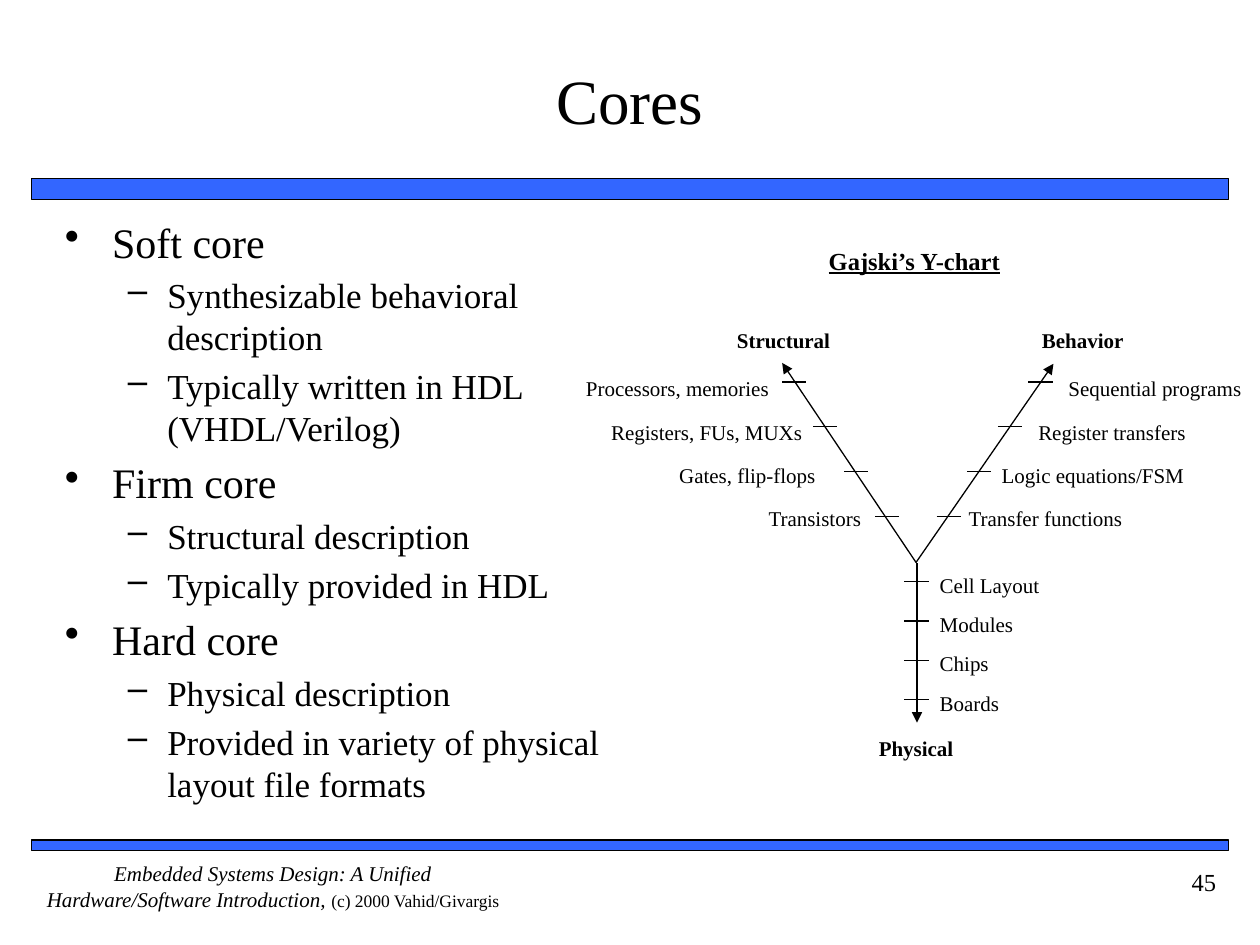
import pptx
import pptx.dml.color
import pptx.enum.shapes
import pptx.enum.text
import pptx.oxml
import pptx.util
from dataclasses import dataclass
from pptx.oxml.ns import qn

Pt = pptx.util.Pt
ALIGN = pptx.enum.text.PP_ALIGN
RGB = pptx.dml.color.RGBColor


@dataclass(frozen=True)
class Theme:
    font: str = "Times New Roman"
    ink: RGB = RGB(0, 0, 0)
    bar: RGB = RGB(0x33, 0x66, 0xFF)
    title: int = 36
    topic: int = 24
    detail: int = 20
    heading: int = 14
    label: int = 12
    credit: int = 10
    bar_line: float = 1
    chart_line: float = 0.75


THEME = Theme()

CORES = [
    ("Soft core", ["Synthesizable behavioral description",
                   "Typically written in HDL (VHDL/Verilog)"]),
    ("Firm core", ["Structural description", "Typically provided in HDL"]),
    ("Hard core", ["Physical description",
                   "Provided in variety of physical layout file formats"]),
]

# Each label: text, left edge within the chart, width
STRUCTURAL = [("Processors, memories", 4.8, 110), ("Registers, FUs, MUXs", 19.2, 112),
              ("Gates, flip-flops", 58.1, 87), ("Transistors", 109.2, 56)]
BEHAVIOR = [("Sequential programs", 280.5, 101), ("Register transfers", 263.3, 90),
            ("Logic equations/FSM", 242.4, 107), ("Transfer functions", 223.5, 92)]
PHYSICAL = [("Cell Layout", 207, 70), ("Modules", 207, 46),
            ("Chips", 207, 37), ("Boards", 207, 40)]


def add_run(paragraph, text, size, **formats):
    run = paragraph.add_run()
    run.text = text
    values = {"name": THEME.font, "size": Pt(size), **formats}
    for name, value in values.items():
        setattr(run.font, name, value)
    run.font.color.rgb = THEME.ink


def add_frame(slide, box, inset_x=0, inset_y=0):
    """Add a wrapping text box and return its text frame."""
    frame = slide.shapes.add_textbox(*map(Pt, box)).text_frame
    values = {"word_wrap": True, "margin_left": Pt(inset_x), "margin_right": Pt(inset_x),
              "margin_top": Pt(inset_y), "margin_bottom": Pt(inset_y)}
    for name, value in values.items():
        setattr(frame, name, value)
    return frame


def add_text(slide, box, text, size, align=ALIGN.LEFT, **formats):
    frame = add_frame(slide, box)
    frame.paragraphs[0].alignment = align
    add_run(frame.paragraphs[0], text, size, **formats)
    return frame


def add_bar(slide, box):
    bar = slide.shapes.add_shape(pptx.enum.shapes.MSO_SHAPE.RECTANGLE, *map(Pt, box))
    bar.shadow.inherit = False
    bar.fill.solid()
    bar.fill.fore_color.rgb = THEME.bar
    bar.line.color.rgb = THEME.ink
    bar.line.width = Pt(THEME.bar_line)


def style_line(shape, *arrow_ends):
    """Draw a thin line; arrow_ends may hold headEnd and tailEnd, in that order."""
    shape.line.color.rgb = THEME.ink
    shape.line.width = Pt(THEME.chart_line)
    line = shape.line._get_or_add_ln()
    for end in arrow_ends:
        line.append(line.makeelement(qn(f"a:{end}"), {"type": "triangle"}))
    properties = shape._element.spPr
    if properties.find(qn("a:effectLst")) is None:
        properties.append(properties.makeelement(qn("a:effectLst"), {}))


def add_line(slide, x1, y1, x2, y2, *arrow_ends):
    line = slide.shapes.add_connector(
        pptx.enum.shapes.MSO_CONNECTOR.STRAIGHT, Pt(x1), Pt(y1), Pt(x2), Pt(y2))
    style_line(line, *arrow_ends)


def add_title(slide, box, text):
    frame = add_text(slide, box, text, THEME.title, ALIGN.CENTER)
    frame.vertical_anchor = pptx.enum.text.MSO_ANCHOR.MIDDLE


def add_bullet(paragraph, text, size, symbol, level, indent, hanging):
    paragraph.level = level
    properties = paragraph._p.get_or_add_pPr()
    properties.set("marL", str(Pt(indent)))
    properties.set("indent", str(-Pt(hanging)))
    properties.append(properties.makeelement(qn("a:buChar"), {"char": symbol}))
    add_run(paragraph, text, size)


def add_core_list(slide, box):
    frame = add_frame(slide, box, 7.2, 3.6)
    items = []
    for topic, details in CORES:
        items.append((topic, THEME.topic, "•", 0, 27, 27))
        items += [(detail, THEME.detail, "–", 1, 58.5, 22.5) for detail in details]
    for index, item in enumerate(items):
        paragraph = frame.add_paragraph() if index else frame.paragraphs[0]
        paragraph.space_before = Pt(0.2 * item[1] if index else 0)
        add_bullet(paragraph, *item)


def add_axis(slide, origin, labels, first_tick, tick_step, first_label, label_step):
    """Place evenly stepped ticks along one axis, each with its label."""
    left, top = origin
    tick_width = 13.8
    for index, (text, label_left, width) in enumerate(labels):
        x = left + first_tick[0] + index * tick_step[0]
        y = top + first_tick[1] + index * tick_step[1]
        add_line(slide, x, y, x + tick_width, y)
        label_top = top + first_label + index * label_step
        add_text(slide, (left + label_left, label_top, width, 15), text, THEME.label)


def add_y_chart(slide, box):
    left, top, _, _ = box
    add_text(slide, (left + 118, top, 149, 16.5), "Gajski’s Y-chart", THEME.heading,
             ALIGN.CENTER, bold=True, underline=True)
    for text, x, y, width in [("Structural", 81, 47, 73.5), ("Behavior", 244.5, 47, 88.5),
                              ("Physical", 167, 280, 53)]:
        add_text(slide, (left + x, top + y, width, 15), text, THEME.label,
                 ALIGN.CENTER, bold=True)

    points = [(Pt(left + x), Pt(top + y)) for x, y in [(117, 67), (193.5, 181), (272, 67.5)]]
    builder = slide.shapes.build_freeform(*points[0])
    builder.add_line_segments(points[1:], close=False)
    arms = builder.convert_to_shape()
    arms.shadow.inherit = False
    arms.fill.background()
    style_line(arms, "headEnd", "tailEnd")
    add_line(slide, left + 194, top + 181.5, left + 194, top + 272.5, "tailEnd")

    origin = (left, top)
    add_axis(slide, origin, STRUCTURAL, (117, 77.9), (17.7, 25.6), 74.3, 24.8)
    add_axis(slide, origin, BEHAVIOR, (257.7, 77.9), (-17.5, 25.6), 74.3, 24.8)
    add_axis(slide, origin, PHYSICAL, (186.8, 192), (0, 22.5), 186.6, 22.5)


def add_footer(slide, box):
    left, top, width, height = box
    add_bar(slide, (left, top, width, 6))
    text_top = top + 12
    frame = add_text(slide, (left, text_top, 276, 36),
                     "Embedded Systems Design: A Unified Hardware/Software Introduction, ",
                     THEME.label, ALIGN.CENTER, italic=True)
    add_run(frame.paragraphs[0], "(c) 2000 Vahid/Givargis", THEME.credit)
    number = add_frame(slide, (left + width - 72, text_top, 72, height - 12), 7.2, 3.6)
    number.paragraphs[0].alignment = ALIGN.RIGHT
    add_run(number.paragraphs[0], "45", THEME.heading)


def main():
    presentation = pptx.Presentation()
    presentation.slide_width, presentation.slide_height = Pt(720), Pt(540)
    slide = presentation.slides.add_slide(presentation.slide_layouts[6])
    add_bar(slide, (18, 102, 684, 12))
    add_title(slide, (30, 12, 660, 90), "Cores")
    add_core_list(slide, (30, 120, 353.5, 354))
    add_y_chart(slide, (330, 140.4, 382, 295))
    add_footer(slide, (18, 480, 684, 48))
    presentation.save("out.pptx")


if __name__ == "__main__":
    main()
